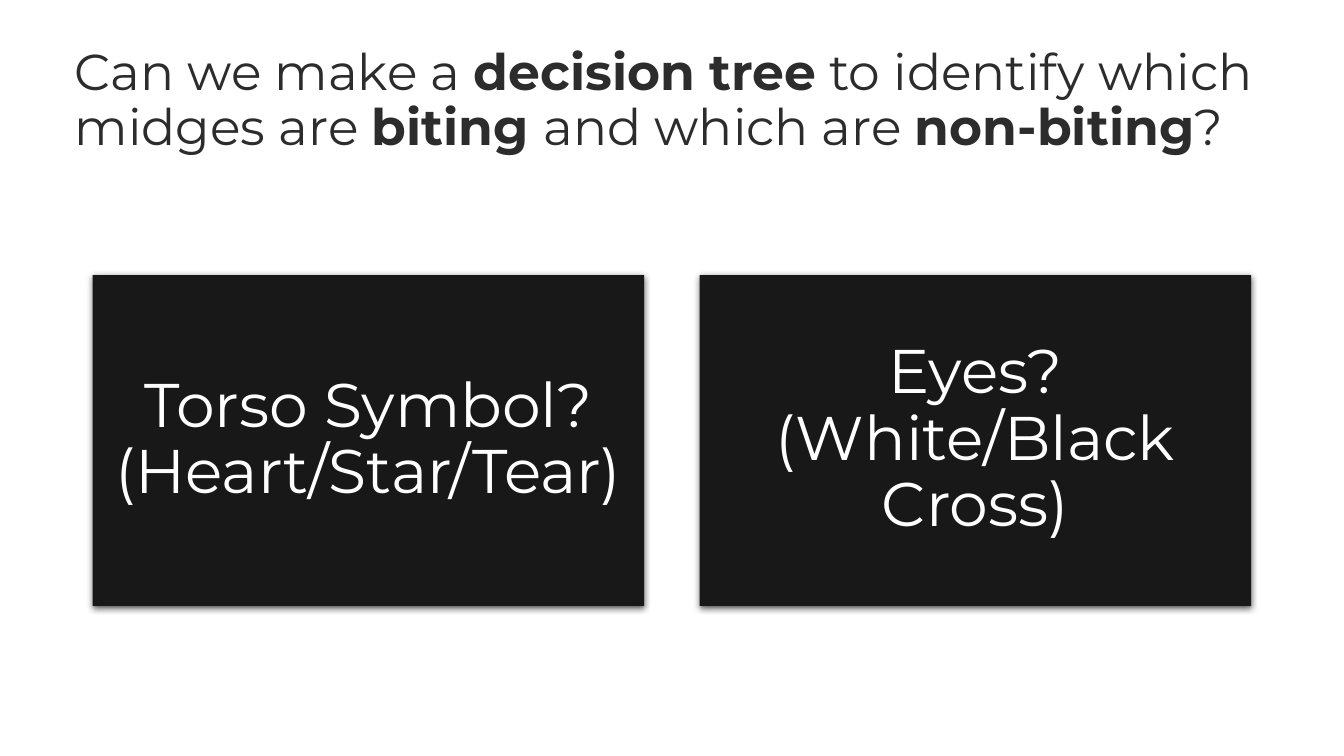
from dataclasses import dataclass

from lxml import etree
from pptx import Presentation
from pptx.dml.color import RGBColor
from pptx.enum import shapes, text
from pptx.oxml import ns
from pptx.util import Inches, Pt

FONT = "Montserrat"
INK = RGBColor(0x2C, 0x2C, 0x2C)
BLACK = RGBColor(0x18, 0x18, 0x18)
WHITE = RGBColor(0xFF, 0xFF, 0xFF)
LEFT, TOP, WIDE, HIGH, STEP = 0.92, 2.73, 5.47, 3.28, 6.02


@dataclass
class Part:
    words: str
    bold: bool = False


@dataclass
class Card:
    words: str
    left: float


PARTS = [
    Part("Can we make a "),
    Part("decision tree", True),
    Part(" to identify which midges are "),
    Part("biting ", True),
    Part("and which are "),
    Part("non-biting", True),
    Part("?"),
]
WORDS = ["Torso Symbol? (Heart/Star/Tear)", "Eyes? (White/Black Cross)"]
CARDS = [Card(words, LEFT + i * STEP) for i, words in enumerate(WORDS)]


def style(run, size: int, color: RGBColor, bold: bool = False) -> None:
    run.font.name = FONT
    run.font.size = Pt(size)
    run.font.bold = bold
    run.font.color.rgb = color


def draw_title(title, parts: list[Part]) -> None:
    title.left, title.top = Inches(0.64), Inches(0.42)
    title.width, title.height = Inches(12.05), Inches(1.73)
    frame = title.text_frame
    frame.auto_size = text.MSO_AUTO_SIZE.NONE
    frame.vertical_anchor = text.MSO_ANCHOR.TOP
    frame.word_wrap = True
    line = frame.paragraphs[0]
    line.alignment = text.PP_ALIGN.LEFT
    line.line_spacing = 0.9
    line.space_before = Pt(0)
    for part in parts:
        run = line.add_run()
        run.text = part.words
        style(run, 36, INK, part.bold)


def add_shade(box) -> None:
    box.shadow.inherit = False
    list_ = box._element.spPr.find(ns.qn("a:effectLst"))
    shade = etree.SubElement(
        list_, ns.qn("a:outerShdw"), blurRad=str(Pt(4.5)),
        dist=str(Pt(1.5)), dir="5400000", algn="ctr", rotWithShape="0")
    color = etree.SubElement(shade, ns.qn("a:srgbClr"), val="000000")
    etree.SubElement(color, ns.qn("a:alpha"), val="63000")


def draw_card(slide, card: Card) -> None:
    box = slide.shapes.add_shape(
        shapes.MSO_SHAPE.RECTANGLE, Inches(card.left), Inches(TOP),
        Inches(WIDE), Inches(HIGH))
    box.fill.solid()
    box.fill.fore_color.rgb = BLACK
    box.line.fill.background()
    add_shade(box)
    frame = box.text_frame
    frame.word_wrap = True
    frame.vertical_anchor = text.MSO_ANCHOR.MIDDLE
    frame.margin_left = frame.margin_right = Inches(0.18)
    frame.margin_top = frame.margin_bottom = Inches(0.18)
    frame.text = card.words
    line = frame.paragraphs[0]
    line.alignment = text.PP_ALIGN.CENTER
    line.line_spacing = 0.9
    style(line.runs[0], 44, WHITE)


def main() -> None:
    deck = Presentation()
    deck.slide_width, deck.slide_height = Inches(13.33), Inches(7.5)
    slide = deck.slides.add_slide(deck.slide_layouts[5])
    draw_title(slide.shapes.title, PARTS)
    for card in CARDS:
        draw_card(slide, card)
    deck.save("out.pptx")


if __name__ == "__main__":
    main()
